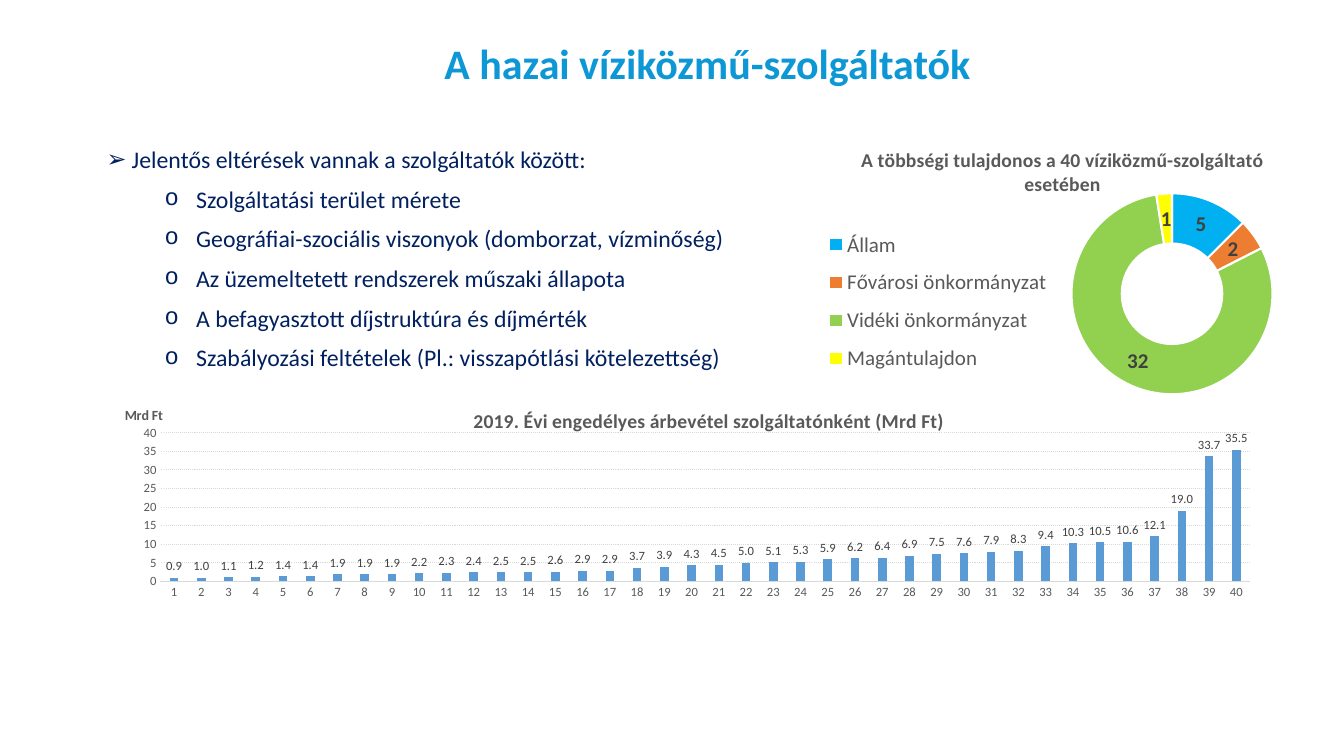
from pptx import Presentation
from pptx.chart.data import CategoryChartData
from pptx.dml.color import RGBColor
from pptx.enum.chart import XL_CHART_TYPE, XL_LABEL_POSITION, XL_LEGEND_POSITION, XL_TICK_MARK
from pptx.enum.dml import MSO_LINE
from pptx.enum.text import MSO_ANCHOR, PP_ALIGN
from pptx.oxml import parse_xml
from pptx.oxml.ns import nsdecls, qn
from pptx.util import Pt

DOUGHNUT = XL_CHART_TYPE.DOUGHNUT
COLUMNS = XL_CHART_TYPE.COLUMN_CLUSTERED
NO_TICK = XL_TICK_MARK.NONE
FONT = "Calibri"
GREY, DARK_GREY, PALE_GREY = "595959", "404040", "D9D9D9"
NAVY, TITLE_BLUE, BAR_BLUE, WHITE = "002060", "0D97D5", "5B9BD5", "FFFFFF"

HEADING = "A hazai víziközmű-szolgáltatók"
DIFFERENCES = [
    (0, "Jelentős eltérések vannak a szolgáltatók között:"),
    (1, "Szolgáltatási terület mérete"),
    (1, "Geográfiai-szociális viszonyok (domborzat, vízminőség)"),
    (1, "Az üzemeltetett rendszerek műszaki állapota"),
    (1, "A befagyasztott díjstruktúra és díjmérték"),
    (1, "Szabályozási feltételek (Pl.: visszapótlási kötelezettség)"),
]
BULLETS = [("➢", FONT, 18, 18), ("o", "Courier New", 64, 22.5)]
OWNERS_TITLE = "A többségi tulajdonos a 40 víziközmű-szolgáltató esetében"
OWNERS = [
    ("Állam", 5, "00B0F0"),
    ("Fővárosi önkormányzat", 2, "ED7D31"),
    ("Vidéki önkormányzat", 32, "92D050"),
    ("Magántulajdon", 1, "FFFF00"),
]
REVENUE_TITLE = "2019. Évi engedélyes árbevétel szolgáltatónként (Mrd Ft)"
REVENUE_UNIT = "Mrd Ft"
REVENUES = [
    0.9, 1, 1.1, 1.2, 1.4, 1.4, 1.9, 1.9, 1.9, 2.2,
    2.3, 2.4, 2.5, 2.5, 2.6, 2.9, 2.9, 3.7, 3.9, 4.3,
    4.5, 5, 5.1, 5.3, 5.9, 6.2, 6.4, 6.9, 7.5, 7.6,
    7.9, 8.3, 9.4, 10.3, 10.5, 10.6, 12.1, 19, 33.7, 35.5,
]


def rgb(value):
    return RGBColor.from_string(value)


def style(font, size, color, bold=False):
    font.name = FONT
    font.size = Pt(size)
    font.bold = bold
    font.color.rgb = rgb(color)


def place(element, index, x, y, w=None, h=None, inner=False):
    for old in element.findall(qn("c:layout")):
        element.remove(old)
    parts = [("layoutTarget", "inner")] if inner else []
    parts += [("xMode", "edge"), ("yMode", "edge"), ("x", x), ("y", y)]
    if w is not None:
        parts += [("w", w), ("h", h)]
    body = "".join(f'<c:{tag} val="{val}"/>' for tag, val in parts)
    element.insert(index, parse_xml(
        f'<c:layout {nsdecls("c")}><c:manualLayout>{body}</c:manualLayout></c:layout>'))


def write_title(title, text, size, x, y):
    title.text_frame.text = text
    for run in title.text_frame.paragraphs[0].runs:
        style(run.font, size, GREY, True)
    place(title._element, 1, x, y)


def add_chart(kind, box, categories, values, text, title_at, plot):
    data = CategoryChartData()
    data.categories = categories
    data.add_series("Series 1", values)
    chart = slide.shapes.add_chart(kind, *map(Pt, box), data).chart
    style(chart.font, 10, "000000")
    chart.has_title = True
    write_title(chart.chart_title, text, 14, *title_at)
    chart.chart_title.include_in_layout = False
    place(chart._chartSpace.chart.plotArea, 0, *plot, inner=True)
    return chart


def show_values(plot, size, bold, number_format):
    plot.has_data_labels = True
    labels = plot.data_labels
    labels.show_value = True
    labels.number_format = number_format
    labels.number_format_is_linked = False
    style(labels.font, size, DARK_GREY, bold)
    return labels


def add_heading():
    heading = slide.shapes.title
    heading.left, heading.top, heading.width, heading.height = map(Pt, (163.5, 21.5, 684, 51))
    frame = heading.text_frame
    frame.text = HEADING
    frame.vertical_anchor = MSO_ANCHOR.MIDDLE
    paragraph = frame.paragraphs[0]
    paragraph.alignment = PP_ALIGN.CENTER
    paragraph.line_spacing = 0.9
    style(paragraph.runs[0].font, 30, TITLE_BLUE, True)


def add_differences():
    frame = slide.shapes.add_textbox(*map(Pt, (69, 102, 480, 176))).text_frame
    frame.word_wrap = True
    for i, (level, text) in enumerate(DIFFERENCES):
        paragraph = frame.add_paragraph() if i else frame.paragraphs[0]
        paragraph.text = text
        paragraph.line_spacing = 0.9
        paragraph.space_before = Pt(10 if i else 0)
        sign, face, margin, hanging = BULLETS[level]
        properties = paragraph._p.get_or_add_pPr()
        properties.set("marL", str(Pt(margin)))
        properties.set("indent", str(-Pt(hanging)))
        properties.append(parse_xml(f'<a:buFont {nsdecls("a")} typeface="{face}"/>'))
        properties.append(parse_xml(f'<a:buChar {nsdecls("a")} char="{sign}"/>'))
        style(paragraph.runs[0].font, 17, NAVY)


def add_owners():
    names, counts, colors = zip(*OWNERS)
    chart = add_chart(DOUGHNUT, (553, 95.75, 372, 210), names, counts,
                      OWNERS_TITLE, (0.16, 0.03), (0.571, 0.201, 0.386, 0.685))
    chart.has_legend = True
    legend = chart.legend
    legend.position = XL_LEGEND_POSITION.LEFT
    legend.include_in_layout = False
    style(legend.font, 15, GREY)
    place(legend._element, 1, 0.1, 0.29, 0.43, 0.56)
    ring = chart.plots[0]
    ring.vary_by_categories = True
    show_values(ring, 15, True, "General")
    for i, color in enumerate(colors):
        piece = ring.series[0].points[i].format
        piece.fill.solid()
        piece.fill.fore_color.rgb = rgb(color)
        piece.line.color.rgb = rgb(WHITE)
        piece.line.width = Pt(1.5)


def add_revenues():
    providers = [str(i + 1) for i in range(len(REVENUES))]
    chart = add_chart(COLUMNS, (79, 281, 828, 152.5), providers, REVENUES,
                      REVENUE_TITLE, (0.31, 0.05), (0.043, 0.185, 0.94, 0.696))
    chart.has_legend = False
    bars = chart.plots[0]
    bars.vary_by_categories = False
    bars.gap_width = 219
    bars.overlap = -27
    fill = bars.series[0].format.fill
    fill.solid()
    fill.fore_color.rgb = rgb(BAR_BLUE)
    labels = show_values(bars, 9, False, "#,##0.0")
    labels.position = XL_LABEL_POSITION.OUTSIDE_END
    provider_axis, revenue_axis = chart.category_axis, chart.value_axis
    for axis in (provider_axis, revenue_axis):
        axis.major_tick_mark = axis.minor_tick_mark = NO_TICK
        style(axis.tick_labels.font, 9, GREY)
    revenue_axis.minimum_scale = 0
    revenue_axis.maximum_scale = 40
    revenue_axis.major_unit = 5
    revenue_axis.has_major_gridlines = True
    grid = revenue_axis.major_gridlines.format.line
    for line in (provider_axis.format.line, grid):
        line.color.rgb = rgb(PALE_GREY)
        line.width = Pt(0.75)
    grid.dash_style = MSO_LINE.ROUND_DOT
    revenue_axis.format.line.fill.background()
    revenue_axis.has_title = True
    unit = revenue_axis.axis_title
    write_title(unit, REVENUE_UNIT, 10, 0.01, 0.05)
    unit.text_frame._txBody.bodyPr.set("rot", "0")


deck = Presentation()
deck.slide_width, deck.slide_height = Pt(960), Pt(540)
slide = deck.slides.add_slide(deck.slide_layouts[5])
add_heading()
add_differences()
add_owners()
add_revenues()
deck.save("out.pptx")
